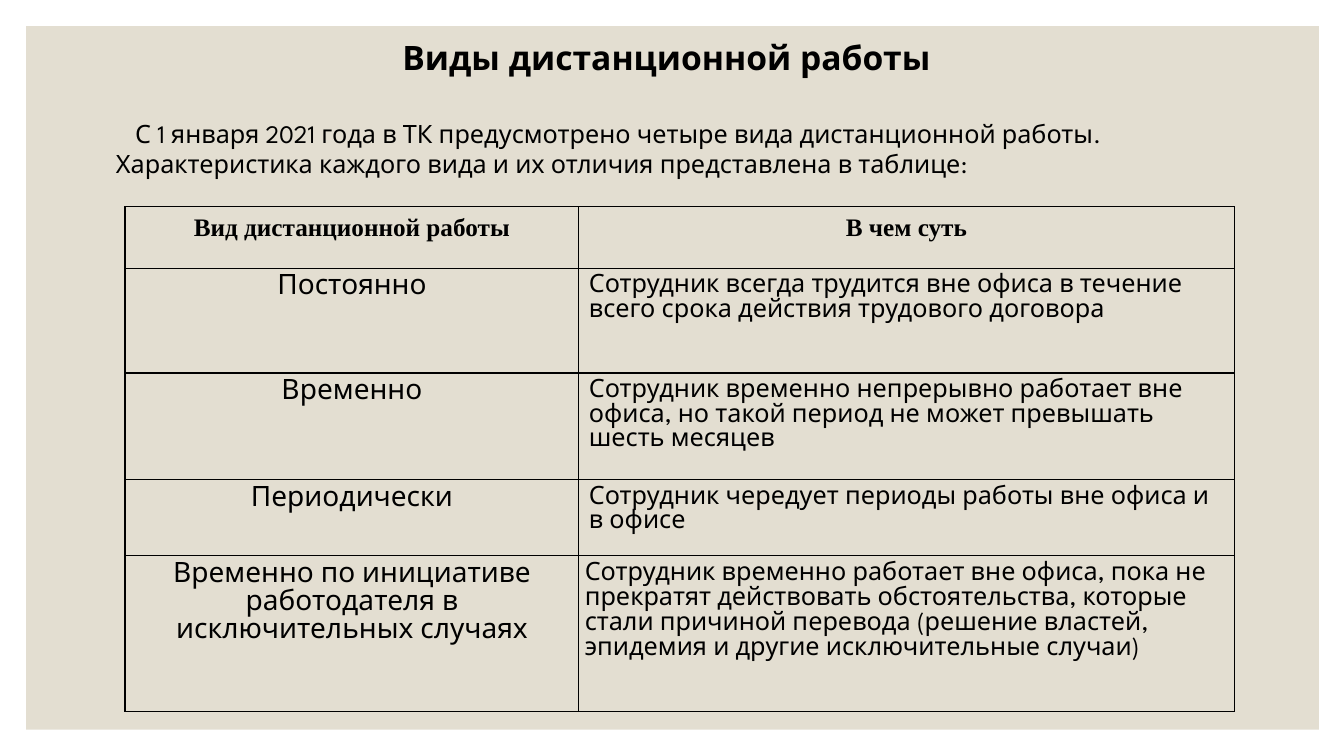
from lxml.etree import SubElement
from pptx import Presentation
from pptx.dml.color import RGBColor
from pptx.enum.shapes import MSO_SHAPE as Shape
from pptx.enum.text import MSO_AUTO_SIZE as AutoSize, MSO_ANCHOR as Anchor, PP_ALIGN as Align
from pptx.oxml.ns import qn
from pptx.util import Inches, Pt

COLORS = {"panel": "E3DED1", "ink": "000000"}
MAIN_FONT, HEADER_FONT = "League Spartan", "Times New Roman"
COLUMN_WIDTHS = (4.5, 6.5)
ROW_HEIGHTS = (0.61, 1.04, 1.06, 0.75, 1.55)
HEADERS = ("Вид дистанционной работы", "В чем суть")
WORK_TYPES = (
    ("Постоянно",
     "Сотрудник всегда трудится вне офиса в течение всего срока действия трудового договора"),
    ("Временно",
     "Сотрудник временно непрерывно работает вне офиса, но такой период не может превышать шесть месяцев"),
    ("Периодически",
     "Сотрудник чередует периоды работы вне офиса и в офисе"),
    ("Временно по инициативе работодателя в исключительных случаях",
     "Сотрудник временно работает вне офиса, пока не прекратят действовать обстоятельства, которые "
     "стали причиной перевода (решение властей, эпидемия и другие исключительные случаи)"),
)


class SlideBuilder:
    """Draws styled elements on the current slide."""

    def __init__(self, deck):
        self.page = deck.slides.add_slide(deck.slide_layouts[1])

    def color(self, name):
        return RGBColor.from_string(COLORS[name])

    def style(self, para, size, align, bold=False, font=MAIN_FONT, spacing=1.0):
        para.alignment = align
        para.line_spacing = spacing
        para.space_before = Pt(0)
        para.font.name = font
        para.font.size = Pt(size)
        para.font.bold = bold
        para.font.color.rgb = self.color("ink")

    def panel(self, left, top, width, height):
        box = self.page.shapes.add_shape(
            Shape.RECTANGLE, Inches(left), Inches(top), Inches(width), Inches(height))
        box.shadow.inherit = False
        box.fill.solid()
        box.fill.fore_color.rgb = self.color("panel")
        box.line.fill.background()
        box.element.getparent().insert(2, box.element)

    def placeholder(self, index, text, top, height, size, align, bold=False, indent=0):
        box = self.page.placeholders[index]
        box.left, box.top, box.width, box.height = map(Inches, (1.05, top, 11.12, height))
        frame = box.text_frame
        frame.text = text
        frame.word_wrap = True
        frame.auto_size = AutoSize.NONE
        frame.vertical_anchor = Anchor.TOP
        para = frame.paragraphs[0]
        self.style(para, size, align, bold)
        properties = para._p.get_or_add_pPr()
        properties.set("marL", "0")
        properties.set("indent", str(Inches(indent)))
        properties.insert_element_before(
            properties.makeelement(qn("a:buNone")), "a:tabLst", "a:defRPr", "a:extLst")

    def border(self, cell):
        properties = cell._tc.get_or_add_tcPr()
        for position, side in enumerate(("lnL", "lnR", "lnT", "lnB")):
            line = properties.makeelement(qn(f"a:{side}"), {"w": str(Pt(1))})
            fill = SubElement(line, qn("a:solidFill"))
            SubElement(fill, qn("a:srgbClr"), val=COLORS["ink"])
            properties.insert(position, line)

    def cell(self, cell, text, inset, **style):
        cell.text = text
        cell.fill.background()
        cell.margin_left = cell.margin_right = Inches(inset[0])
        cell.margin_top = cell.margin_bottom = Inches(inset[1])
        self.style(cell.text_frame.paragraphs[0], spacing=1.07, **style)
        self.border(cell)

    def table(self, left, top):
        table = self.page.shapes.add_table(
            len(ROW_HEIGHTS), len(COLUMN_WIDTHS), Inches(left), Inches(top),
            Inches(sum(COLUMN_WIDTHS)), Inches(sum(ROW_HEIGHTS))).table
        table.first_row = table.horz_banding = False
        for column, width in zip(table.columns, COLUMN_WIDTHS):
            column.width = Inches(width)
        for row, height in zip(table.rows, ROW_HEIGHTS):
            row.height = Inches(height)
        for column, header in enumerate(HEADERS):
            self.cell(table.cell(0, column), header, (0.1, 0.05),
                      size=18, align=Align.CENTER, bold=True, font=HEADER_FONT)
        for row, (kind, meaning) in enumerate(WORK_TYPES, 1):
            inset = (0.06, 0.06) if row == len(WORK_TYPES) else (0.1, 0.05)
            self.cell(table.cell(row, 0), kind, inset, size=20, align=Align.CENTER)
            self.cell(table.cell(row, 1), meaning, inset, size=18, align=Align.LEFT)


def main():
    deck = Presentation()
    deck.slide_width, deck.slide_height = Inches(13.33), Inches(7.5)
    slide = SlideBuilder(deck)
    slide.panel(0.26, 0.26, 12.82, 6.98)
    slide.placeholder(0, "Виды дистанционной работы", 0.32, 0.6, 24, Align.CENTER, bold=True)
    slide.placeholder(
        1, "С 1 января 2021 года в ТК предусмотрено четыре вида дистанционной работы. "
        "Характеристика каждого вида и их отличия представлена в таблице:",
        1.12, 0.75, 18, Align.LEFT, indent=0.19)
    slide.table(1.24, 2.05)
    deck.save("out.pptx")


if __name__ == "__main__":
    main()
